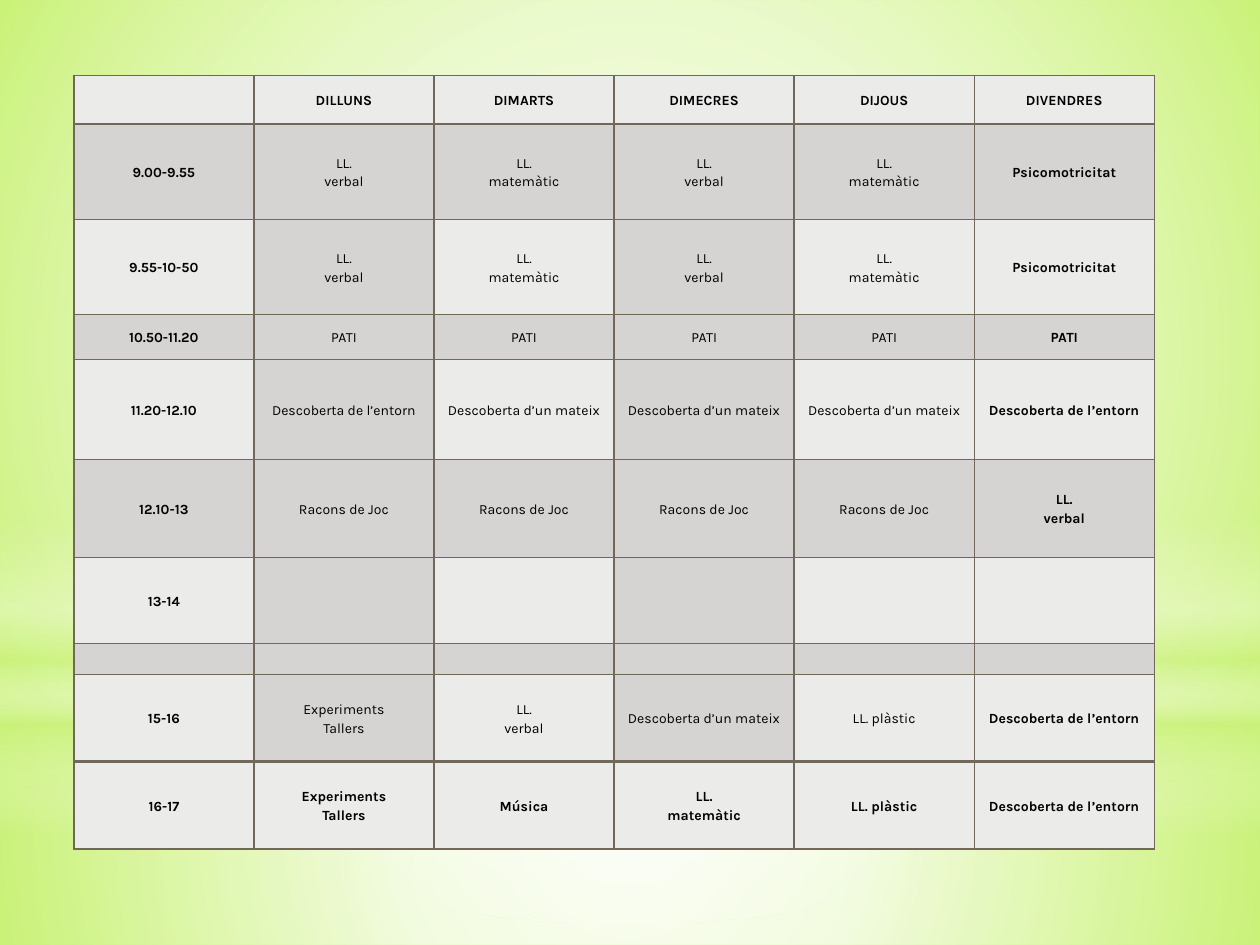
from lxml.etree import SubElement
from pptx import Presentation
from pptx.dml.color import RGBColor
from pptx.enum.shapes import MSO_SHAPE as Preset
from pptx.enum.text import MSO_ANCHOR as Anchor, PP_ALIGN as Align
from pptx.oxml.ns import qn
from pptx.util import Cm, Pt

LIME = RGBColor(0xCA, 0xF2, 0x78)
WHITE = RGBColor(0xFF, 0xFF, 0xFF)
BLACK = RGBColor(0x00, 0x00, 0x00)
LIGHT_GREY = RGBColor(0xEB, 0xEB, 0xEA)
DARK_GREY = RGBColor(0xD5, 0xD4, 0xD2)
BORDER = RGBColor(0x71, 0x68, 0x5A)

SLIDE_WIDTH, SLIDE_HEIGHT = 25.4, 19.05
COLUMN_WIDTH = 3.63
ROW_HEIGHTS = [0.98, 1.92, 1.92, 0.91, 2.01, 1.98, 1.73, 0.63, 1.75, 1.77]

VERBAL = "LL.\nverbal"
MATHS = "LL.\nmatemàtic"
SELF = "Descoberta d’un mateix"
SURROUNDINGS = "Descoberta de l’entorn"
WORKSHOPS = "Experiments\nTallers"
ART = "LL. plàstic"
MOTOR = "Psicomotricitat"
LESSONS = [VERBAL, MATHS, VERBAL, MATHS, MOTOR]

TIMETABLE = [
    ["", "DILLUNS", "DIMARTS", "DIMECRES", "DIJOUS", "DIVENDRES"],
    ["9.00-9.55", *LESSONS],
    ["9.55-10-50", *LESSONS],
    ["10.50-11.20", *["PATI"] * 5],
    ["11.20-12.10", SURROUNDINGS, SELF, SELF, SELF, SURROUNDINGS],
    ["12.10-13", *["Racons de Joc"] * 4, VERBAL],
    ["13-14", *[""] * 5],
    [""] * 6,
    ["15-16", WORKSHOPS, VERBAL, SELF, ART, SURROUNDINGS],
    ["16-17", WORKSHOPS, "Música", MATHS, ART, SURROUNDINGS],
]
LAST_ROW = len(TIMETABLE) - 1
LAST_COLUMN = len(TIMETABLE[0]) - 1


def add_glow(slide, preset, top, height, stops, angle=None):
    """Add a full-width gradient; stops are (position, colour, opacity) in percent.

    Without an angle the gradient spreads from the centre.
    """
    shape = slide.shapes.add_shape(preset, 0, Cm(top), Cm(SLIDE_WIDTH), Cm(height))
    shape.shadow.inherit = False
    shape.line.fill.background()
    shape.fill.gradient()
    gradient = shape._element.spPr.find(qn("a:gradFill"))
    for child in list(gradient):
        gradient.remove(child)
    stop_list = SubElement(gradient, qn("a:gsLst"))
    for position, colour, opacity in stops:
        stop = SubElement(stop_list, qn("a:gs"), pos=str(position * 1000))
        fill = SubElement(stop, qn("a:srgbClr"), val=str(colour))
        SubElement(fill, qn("a:alpha"), val=str(opacity * 1000))
    if angle is None:
        spread = SubElement(gradient, qn("a:path"), path="circle")
        SubElement(spread, qn("a:fillToRect"), l="50000", t="50000", r="50000", b="50000")
    else:
        SubElement(gradient, qn("a:lin"), ang=str(angle * 60000), scaled="0")


def write_text(frame, text, *, size=8, bold=False, colour=BLACK, font="Karla"):
    for index, line in enumerate(text.split("\n")):
        paragraph = frame.add_paragraph() if index else frame.paragraphs[0]
        paragraph.alignment = Align.CENTER
        paragraph.line_spacing = 1.15
        if line:
            run = paragraph.add_run()
            run.text = line
            run.font.name = font
            run.font.size = Pt(size)
            run.font.bold = bold
            run.font.color.rgb = colour
        else:
            SubElement(paragraph._p, qn("a:endParaRPr"), sz=str(size * 100))


def set_borders(cell, top_width):
    properties = cell._tc.get_or_add_tcPr()
    widths = {"a:lnL": 1, "a:lnR": 1, "a:lnT": top_width, "a:lnB": 1}
    for index, (side, width) in enumerate(widths.items()):
        line = SubElement(properties, qn(side), w=str(Pt(width)))
        fill = SubElement(line, qn("a:solidFill"))
        SubElement(fill, qn("a:srgbClr"), val=str(BORDER))
        properties.insert(index, line)


def cell_colour(row, column):
    """Shade odd rows whole, and Monday and Wednesday between first and last row."""
    if row in (0, LAST_ROW):
        return LIGHT_GREY
    return DARK_GREY if row % 2 and row < 8 or column in (1, 3) else LIGHT_GREY


def add_timetable(slide):
    table = slide.shapes.add_table(
        len(TIMETABLE), len(TIMETABLE[0]), Cm(1.49), Cm(1.52),
        Cm(COLUMN_WIDTH * len(TIMETABLE[0])), Cm(sum(ROW_HEIGHTS))).table
    table.first_row = table.horz_banding = False
    for column in table.columns:
        column.width = Cm(COLUMN_WIDTH)
    for row_index, texts in enumerate(TIMETABLE):
        table.rows[row_index].height = Cm(ROW_HEIGHTS[row_index])
        for column_index, text in enumerate(texts):
            cell = table.cell(row_index, column_index)
            cell.vertical_anchor = Anchor.MIDDLE
            cell.margin_left = cell.margin_right = Cm(0.08)
            cell.margin_top = cell.margin_bottom = 0
            cell.fill.solid()
            cell.fill.fore_color.rgb = cell_colour(row_index, column_index)
            set_borders(cell, 2 if row_index == LAST_ROW else 1)
            bold = row_index in (0, LAST_ROW) or column_index in (0, LAST_COLUMN)
            write_text(cell.text_frame, text, bold=bold)


def add_backdrop(slide):
    slide.background.fill.solid()
    slide.background.fill.fore_color.rgb = LIME
    horizon = 14.17
    add_glow(slide, Preset.RECTANGLE, horizon, SLIDE_HEIGHT - horizon,
             [(0, WHITE, 91), (37, WHITE, 76), (100, LIME, 79)])
    add_glow(slide, Preset.RECTANGLE, 0, horizon,
             [(0, WHITE, 89), (48, WHITE, 62), (100, LIME, 79)])
    add_glow(slide, Preset.RECTANGLE, 10.46, 6.35,
             [(0, WHITE, 0), (29, WHITE, 30), (45, LIME, 40),
              (55, WHITE, 26), (65, LIME, 60), (100, WHITE, 0)], angle=90)
    add_glow(slide, Preset.OVAL, 4.45, horizon, [(0, WHITE, 100), (56, WHITE, 0)])


def main():
    presentation = Presentation()
    presentation.slide_width = Cm(SLIDE_WIDTH)
    presentation.slide_height = Cm(SLIDE_HEIGHT)
    slide = presentation.slides.add_slide(presentation.slide_layouts[6])
    add_backdrop(slide)
    add_timetable(slide)
    presentation.save("out.pptx")


if __name__ == "__main__":
    main()
